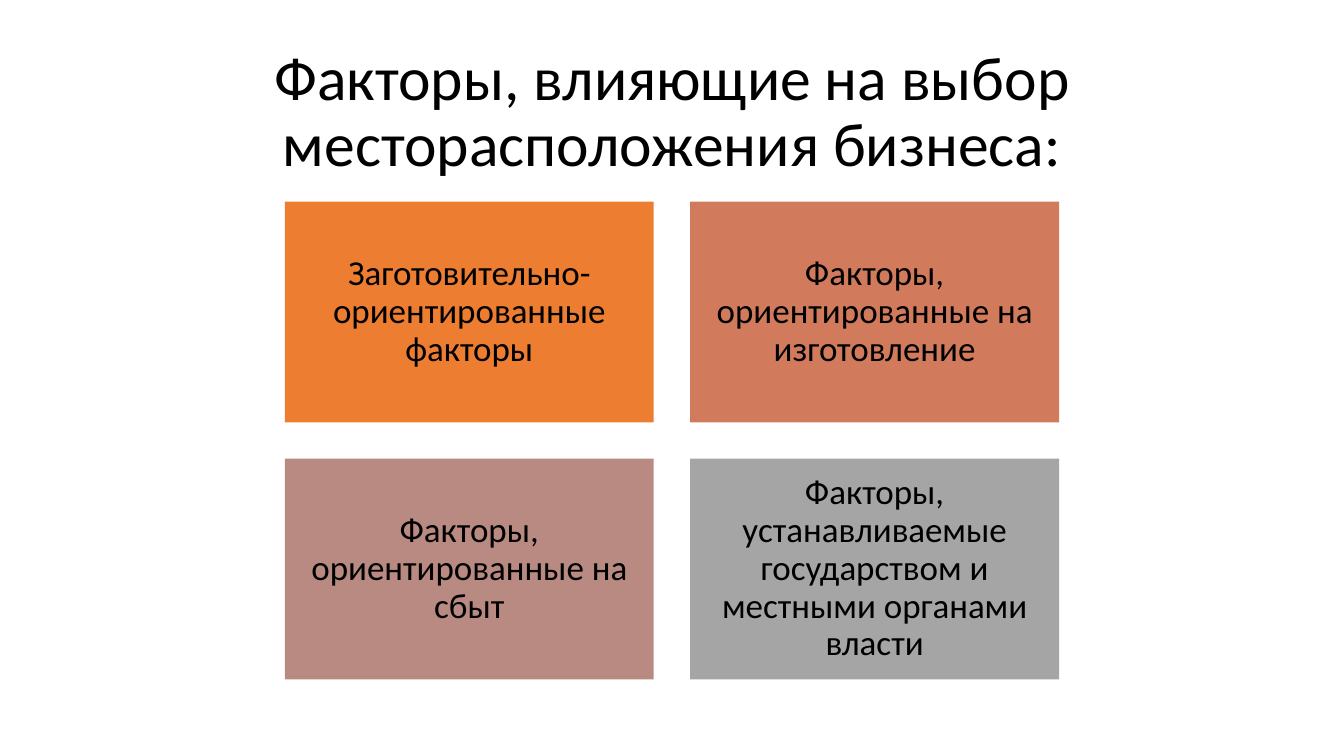
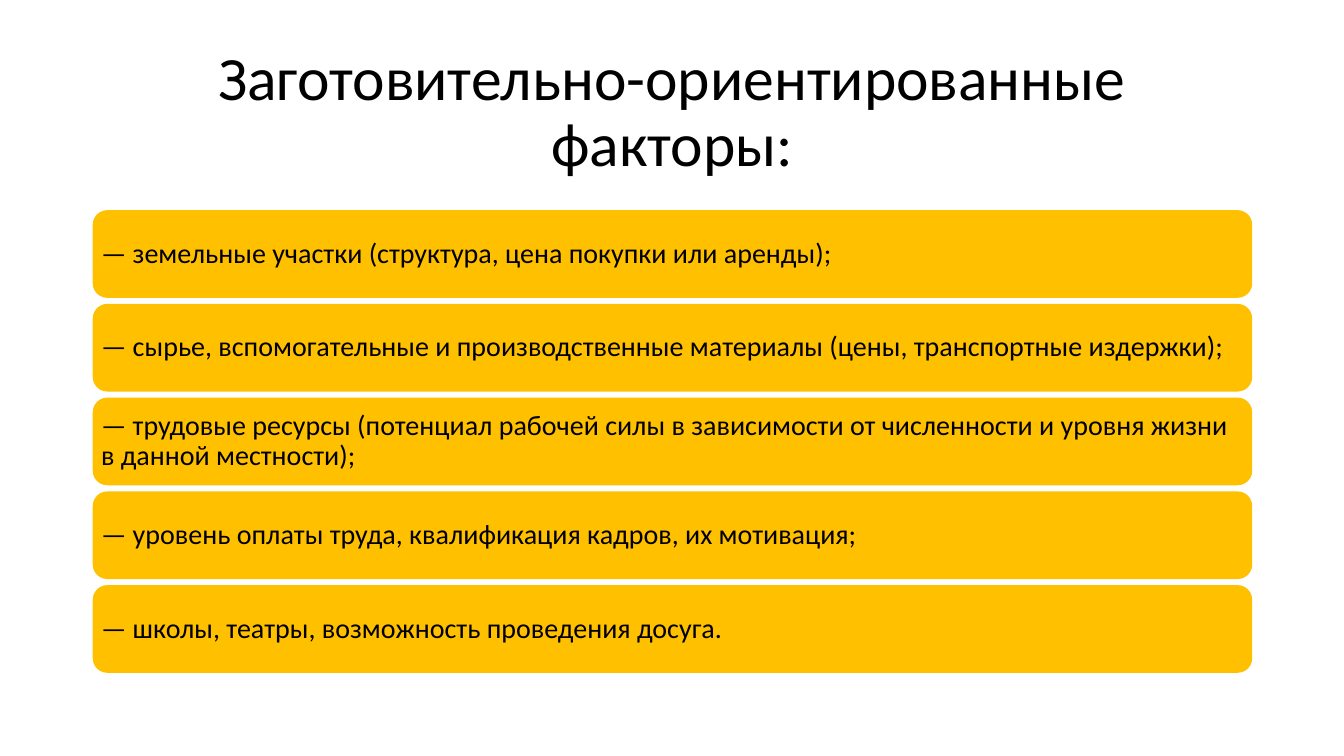
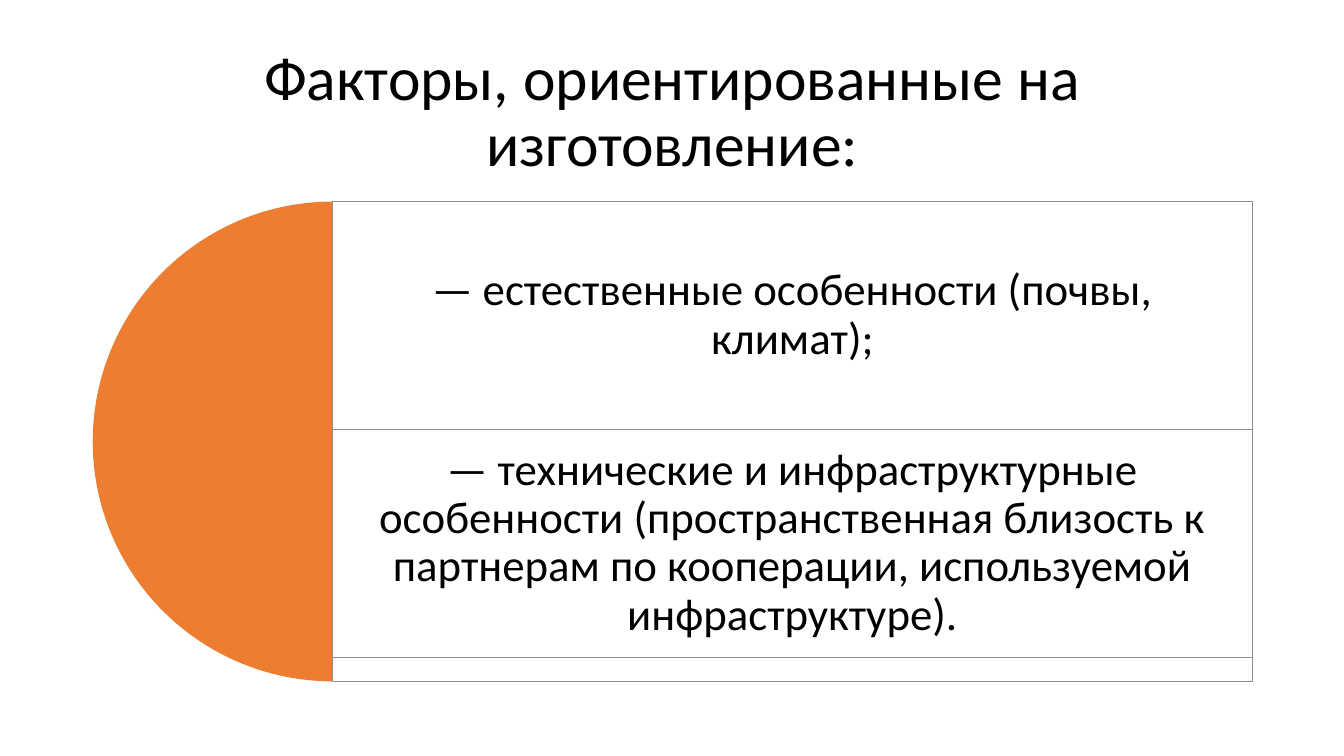
"""Build three slides on the factors that guide the choice of a business location."""
from lxml import etree
from pptx import Presentation
from pptx.dml.color import RGBColor
from pptx.enum.shapes import MSO_SHAPE
from pptx.enum.text import MSO_ANCHOR, PP_ALIGN
from pptx.oxml.ns import qn
from pptx.util import Inches, Pt

RECTANGLE = MSO_SHAPE.RECTANGLE
ROUNDED = MSO_SHAPE.ROUNDED_RECTANGLE
PIE = MSO_SHAPE.PIE
LEFT, CENTER = PP_ALIGN.LEFT, PP_ALIGN.CENTER
MIDDLE = MSO_ANCHOR.MIDDLE

BLACK = RGBColor(0x00, 0x00, 0x00)
WHITE = RGBColor(0xFF, 0xFF, 0xFF)
ORANGE = RGBColor(0xED, 0x7D, 0x31)
TERRACOTTA = RGBColor(0xD1, 0x7B, 0x5C)
ROSE = RGBColor(0xB9, 0x8A, 0x82)
GRAY = RGBColor(0xA5, 0xA5, 0xA5)
GOLD = RGBColor(0xFF, 0xC0, 0x00)
OUTLINE = RGBColor(0x8C, 0x8C, 0x8C)

FONT = "Calibri"
SLIDE_WIDTH, SLIDE_HEIGHT = 13.33, 7.5
MARGIN = 0.92
CONTENT_WIDTH = 11.5
CONTENT_TOP, CONTENT_HEIGHT = 2, 4.76

FACTORS = [
    ("Заготовительно-ориентированные факторы", ORANGE),
    ("Факторы, ориентированные на изготовление", TERRACOTTA),
    ("Факторы, ориентированные на сбыт", ROSE),
    ("Факторы, устанавливаемые государством и местными органами власти", GRAY),
]
SUPPLY_FACTORS = [
    "— земельные участки (структура, цена покупки или аренды);",
    "— сырье, вспомогательные и производственные материалы (цены, транспортные издержки);",
    "— трудовые ресурсы (потенциал рабочей силы в зависимости от численности и уровня жизни "
    "в данной местности);",
    "— уровень оплаты труда, квалификация кадров, их мотивация;",
    "— школы, театры, возможность проведения досуга.",
]
PRODUCTION_FACTORS = [
    "— естественные особенности (почвы, климат);",
    "— технические и инфраструктурные особенности (пространственная близость к партнерам "
    "по кооперации, используемой инфраструктуре).",
]


def write_text(shape, text, size, alignment=CENTER, inset=0.1, bottom_inset=None):
    """Fill a shape with one vertically centred paragraph."""
    frame = shape.text_frame
    frame.word_wrap = True
    frame.vertical_anchor = MIDDLE
    frame.margin_left = frame.margin_right = frame.margin_top = Inches(inset)
    frame.margin_bottom = Inches(inset if bottom_inset is None else bottom_inset)
    paragraph = frame.paragraphs[0]
    paragraph.alignment = alignment
    paragraph.line_spacing = 0.9
    run = paragraph.add_run()
    run.text = text
    run.font.name = FONT
    run.font.size = Pt(size)
    run.font.color.rgb = BLACK


def add_block(slide, kind, left, top, width, height, color):
    """Add a flat, borderless shape."""
    shape = slide.shapes.add_shape(
        kind, Inches(left), Inches(top), Inches(width), Inches(height))
    shape.shadow.inherit = False
    shape.fill.solid()
    shape.fill.fore_color.rgb = color
    shape.line.fill.background()
    return shape


def set_opacity(shape, percent):
    """Make the solid fill of a shape partly transparent."""
    color = shape.fill._xPr.find(qn("a:solidFill"))[0]
    etree.SubElement(color, qn("a:alpha")).set("val", str(percent * 1000))


def add_titled_slide(presentation, title):
    """Add a blank slide with the shared title."""
    slide = presentation.slides.add_slide(presentation.slide_layouts[6])
    box = slide.shapes.add_textbox(
        Inches(MARGIN), Inches(0.4), Inches(CONTENT_WIDTH), Inches(1.45))
    write_text(box, title, 44)
    return slide


def add_factor_grid(slide, factors, columns=2):
    """Lay coloured tiles out in a centred grid."""
    width, height, gap = 3.66, 2.19, 0.36
    grid_left = (SLIDE_WIDTH - columns * width - (columns - 1) * gap) / 2
    for index, (text, color) in enumerate(factors):
        row, column = divmod(index, columns)
        tile = add_block(slide, RECTANGLE, grid_left + column * (width + gap),
                         CONTENT_TOP + row * (height + gap), width, height, color)
        write_text(tile, text, 25)


def add_bar_list(slide, items):
    """Stack rounded bars in the middle of the content area."""
    height, pitch = 0.87, 0.93
    stack_height = (len(items) - 1) * pitch + height
    first_top = CONTENT_TOP + (CONTENT_HEIGHT - stack_height) / 2
    for index, text in enumerate(items):
        bar = add_block(slide, ROUNDED, MARGIN, first_top + index * pitch,
                        CONTENT_WIDTH, height, GOLD)
        write_text(bar, text, 20, LEFT, inset=0.04)


def add_target_list(slide, items):
    """Add half discs on one axis, each with a text panel at its right."""
    row_height, inset = 2.26, 0.13
    axis = MARGIN + CONTENT_HEIGHT / 2
    panel_width = MARGIN + CONTENT_WIDTH - axis
    for index, (text, size) in enumerate(zip(items, (CONTENT_HEIGHT, row_height))):
        top = CONTENT_TOP + index * row_height
        disc = add_block(slide, PIE, axis - size / 2, top, size, size, ORANGE)
        disc.adjustments[0], disc.adjustments[1] = 54, 162
        panel = add_block(slide, RECTANGLE, axis, top, panel_width, size, WHITE)
        set_opacity(panel, 90)
        panel.line.color.rgb = OUTLINE
        panel.line.width = Pt(0.5)
        write_text(panel, text, 32, inset=inset, bottom_inset=size - row_height + inset)


def main():
    """Build and save the presentation."""
    presentation = Presentation()
    presentation.slide_width = Inches(SLIDE_WIDTH)
    presentation.slide_height = Inches(SLIDE_HEIGHT)
    slides = [
        ("Факторы, влияющие на выбор месторасположения бизнеса:", add_factor_grid, FACTORS),
        ("Заготовительно-ориентированные факторы:", add_bar_list, SUPPLY_FACTORS),
        ("Факторы, ориентированные на изготовление:", add_target_list, PRODUCTION_FACTORS),
    ]
    for title, add_content, items in slides:
        add_content(add_titled_slide(presentation, title), items)
    presentation.save("out.pptx")


if __name__ == "__main__":
    main()
